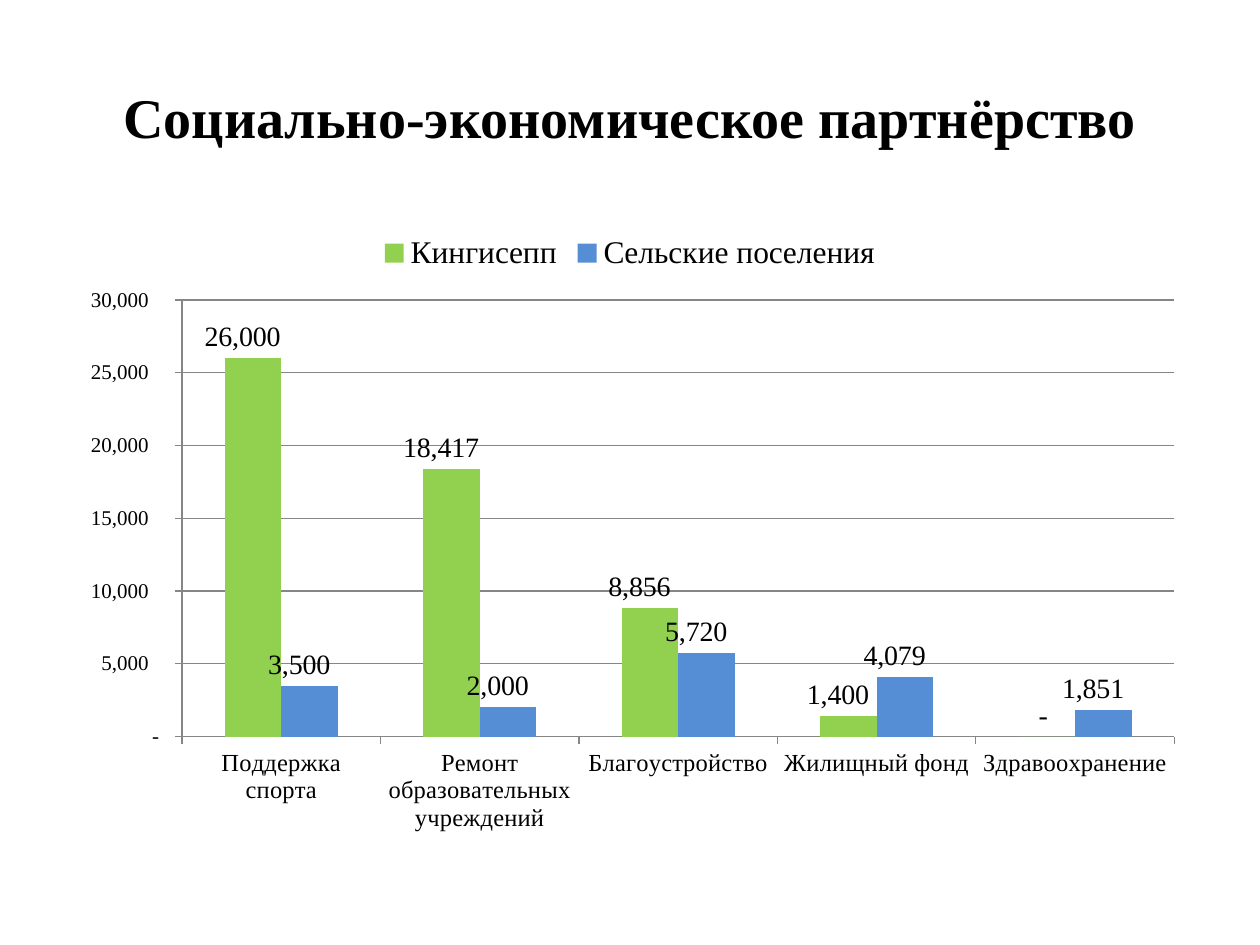
from pptx import Presentation
from pptx.chart.data import CategoryChartData
from pptx.dml.color import RGBColor
from pptx.enum.chart import XL_CHART_TYPE, XL_LABEL_POSITION, XL_LEGEND_POSITION, XL_TICK_MARK
from pptx.enum.text import MSO_ANCHOR, PP_ALIGN
from pptx.util import Pt

COLUMNS = XL_CHART_TYPE.COLUMN_CLUSTERED
LABEL_ABOVE = XL_LABEL_POSITION.OUTSIDE_END
LEGEND_TOP = XL_LEGEND_POSITION.TOP
TICK_OUT = XL_TICK_MARK.OUTSIDE
MIDDLE = MSO_ANCHOR.MIDDLE
CENTER = PP_ALIGN.CENTER

THEME = {
    "font": "Times New Roman",
    "text": RGBColor(0x00, 0x00, 0x00),
    "line": RGBColor(0x86, 0x86, 0x86),
    "series": [RGBColor(0x92, 0xD0, 0x50), RGBColor(0x55, 0x8E, 0xD5)],
    "title": Pt(32),
    "legend": Pt(18),
    "label": Pt(16),
    "category": Pt(14),
    "value": Pt(12),
}
NUMBER_FORMAT = '_-* #,##0_р_._-;\\-* #,##0_р_._-;_-* "-"?'


def style_font(font, size, bold=False):
    font.name = THEME["font"]
    font.size = size
    font.bold = bold
    font.color.rgb = THEME["text"]


prs = Presentation()
prs.slide_width, prs.slide_height = Pt(720), Pt(540)
s = prs.slides.add_slide(prs.slide_layouts[5])

# Title
title = s.shapes.title
title.left, title.top, title.width, title.height = Pt(36), Pt(21.6), Pt(648), Pt(90)
tf = title.text_frame
tf.text = "Социально-экономическое партнёрство"
tf.word_wrap = True
tf.vertical_anchor = MIDDLE
p = tf.paragraphs[0]
p.alignment = CENTER
style_font(p.runs[0].font, THEME["title"], bold=True)

# Chart data
data = CategoryChartData(number_format=NUMBER_FORMAT)
data.categories = ["Поддержка спорта", "Ремонт образовательных учреждений",
                   "Благоустройство", "Жилищный фонд", "Здравоохранение"]
data.add_series("Кингисепп", [26000, 18417, 8856, 1400, 0])
data.add_series("Сельские поселения", [3500, 2000, 5720, 4079, 1851])

chart = s.shapes.add_chart(COLUMNS, Pt(36), Pt(126), Pt(648), Pt(356.4), data).chart
chart.has_title = False
style_font(chart.font, THEME["legend"])

# Legend
chart.has_legend = True
chart.legend.position = LEGEND_TOP
chart.legend.include_in_layout = False
style_font(chart.legend.font, THEME["legend"])

# Axes and gridlines
for axis, size in ((chart.category_axis, THEME["category"]),
                   (chart.value_axis, THEME["value"])):
    axis.major_tick_mark = TICK_OUT
    axis.format.line.color.rgb = THEME["line"]
    axis.format.line.width = Pt(0.75)
    style_font(axis.tick_labels.font, size)
axis = chart.value_axis
axis.minimum_scale, axis.maximum_scale, axis.major_unit = 0, 30000, 5000
axis.has_major_gridlines = True
axis.major_gridlines.format.line.color.rgb = THEME["line"]
axis.major_gridlines.format.line.width = Pt(0.75)
axis.tick_labels.number_format = NUMBER_FORMAT
axis.tick_labels.number_format_is_linked = False

# Columns and their labels
plot = chart.plots[0]
plot.gap_width = 150
plot.overlap = 0
plot.vary_by_categories = False
for series, color in zip(plot.series, THEME["series"]):
    series.format.fill.solid()
    series.format.fill.fore_color.rgb = color
    labels = series.data_labels
    labels.show_value = True
    labels.position = LABEL_ABOVE
    labels.number_format = NUMBER_FORMAT
    labels.number_format_is_linked = False
    style_font(labels.font, THEME["label"])

prs.save("out.pptx")
